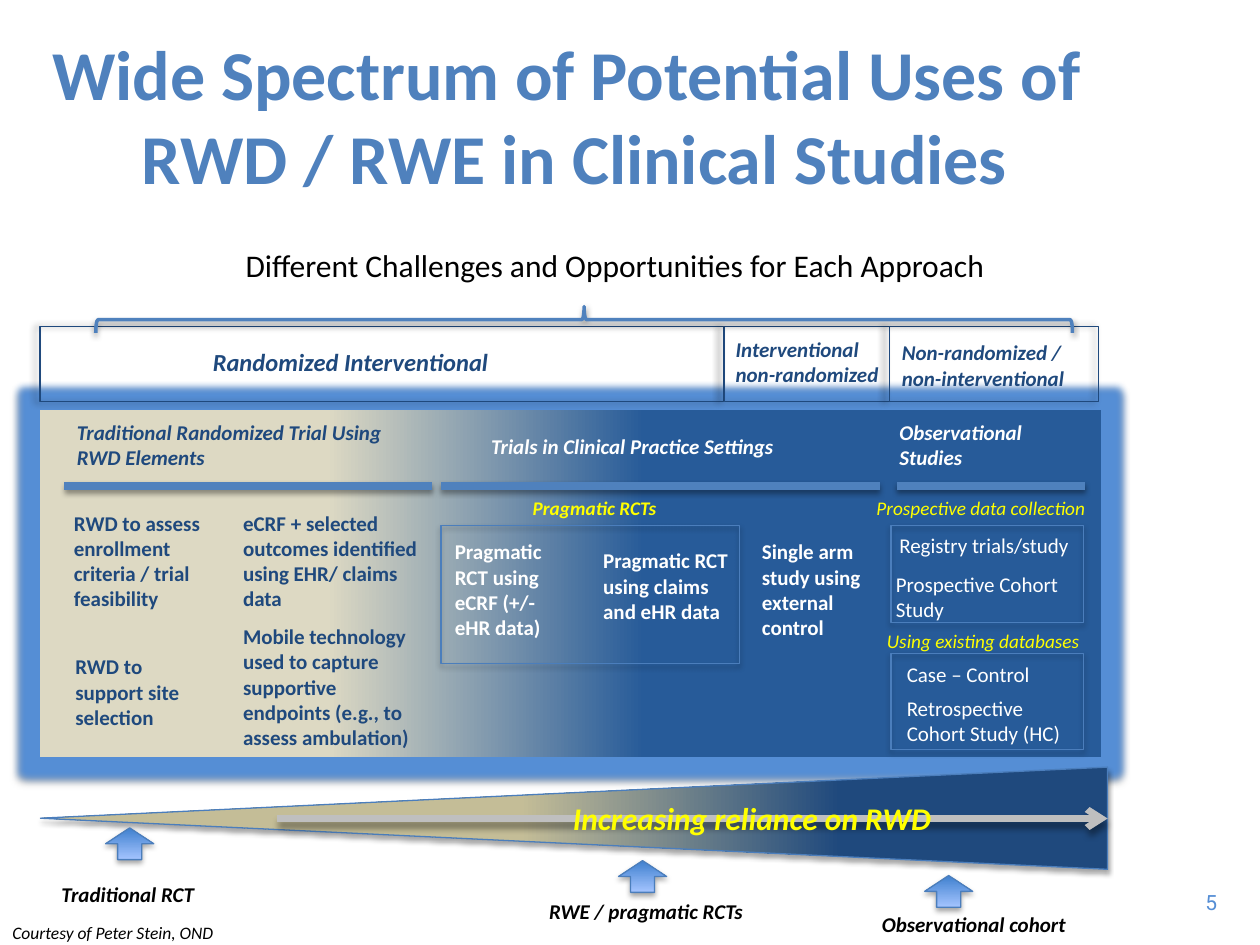
from dataclasses import dataclass
from typing import NamedTuple, Optional

from pptx import Presentation
from pptx.dml.color import RGBColor
from pptx.enum.shapes import MSO_CONNECTOR as Connector, MSO_SHAPE as Preset
from pptx.enum.text import MSO_ANCHOR as Anchor, PP_ALIGN as Align
from pptx.oxml import parse_xml
from pptx.oxml.ns import nsdecls, qn
from pptx.util import Cm, Pt


@dataclass(frozen=True)
class Theme:
    font: str = "Calibri"
    number_font: str = "Roboto"
    accent: str = "4F81BD"
    outline: str = "4B7EBC"
    navy: str = "1F497D"
    white: str = "FFFFFF"
    black: str = "000000"
    yellow: str = "FFFF00"
    gray: str = "BFBFBF"
    number: str = "558ED5"
    glow: str = "558ED5"
    title: float = 40
    large: float = 18
    heading: float = 14
    body: float = 12
    small: float = 11
    credit: float = 10


class Box(NamedTuple):
    """Left, top, width and height in centimetres."""
    left: float
    top: float
    width: float
    height: float


class Shadow(NamedTuple):
    alpha: int
    blur: float
    distance: float
    angle: int


class Stop(NamedTuple):
    position: float
    color: str


@dataclass(frozen=True)
class Label:
    text: str
    box: Box
    color: str
    size: float = 12
    bold: bool = False
    italic: bool = False
    wrap: bool = True
    align: Align = Align.LEFT
    anchor: Anchor = Anchor.TOP
    font: str = "Calibri"
    fill: Optional[str] = None


THEME = Theme()
SOFT = Shadow(35, 3.1, 1.8, 90)
RULE = Shadow(38, 3.1, 1.6, 90)
SIDE = Shadow(40, 4, 3, 180)
BELOW = Shadow(40, 4, 3, 90)

HEADER_TOP, HEADER_HEIGHT = 6.58, 1.52
HEADER_COLUMNS = [(0.81, 13.77), (14.6, 3.33), (17.93, 4.22)]
RULE_Y = 9.8
RULE_SPANS = [(1.3, 8.71), (8.89, 17.73), (18.08, 21.87)]
FRAMES = [Box(17.96, 10.59, 3.89, 1.96), Box(17.96, 13.18, 3.89, 1.93),
          Box(8.89, 10.59, 6.02, 2.79)]
MARKERS = [(2.13, 16.69), (12.47, 17.35), (18.64, 17.65)]


def navy(text: str, *box: float, **style) -> Label:
    return Label(text, Box(*box), THEME.navy, bold=True, **style)


def white(text: str, *box: float, **style) -> Label:
    return Label(text, Box(*box), THEME.white, **style)


def yellow(text: str, *box: float, **style) -> Label:
    return Label(text, Box(*box), THEME.yellow, italic=True, **style)


def milestone(text: str, *box: float) -> Label:
    return Label(text, Box(*box), THEME.black, bold=True, italic=True, fill=THEME.white)


SPECTRUM_LABELS = [
    navy("Randomized Interventional", 4.04, 6.88, 6.12, 0.86,
         size=THEME.heading, italic=True, wrap=False),
    navy("Non-randomized / non-interventional", 17.93, 6.73, 4.06, 1.3, italic=True),
    navy("Interventional non-randomized", 14.58, 6.65, 3.53, 1.27, italic=True),
    navy("Traditional Randomized Trial Using RWD Elements", 1.3, 8.33, 7.32, 1.27, italic=True),
    white("Trials in Clinical Practice Settings", 9.65, 8.61, 6.99, 0.86, bold=True, italic=True),
    white("Observational Studies", 17.88, 8.33, 3.73, 1.45, bold=True, italic=True),
    navy("RWD to assess enrollment criteria / trial feasibility", 1.24, 10.16, 3.28, 2.31),
    navy("RWD to support site selection", 1.27, 13.06, 3.28, 1.8),
    navy("eCRF + selected outcomes identified using EHR/ claims data", 4.65, 10.16, 4.06, 2.31),
    navy("Mobile technology\nused to capture supportive endpoints (e.g., to assess ambulation)",
         4.65, 12.45, 4.24, 2.82),
    yellow("Pragmatic RCTs", 10.49, 9.88, 3.15, 0.74, size=THEME.small, bold=True, wrap=False),
    white("Pragmatic RCT using eCRF (+/- eHR data)", 8.92, 10.74, 2.82, 2.31, bold=True),
    white("Pragmatic RCT using claims and eHR data", 11.91, 10.92, 3.02, 2.31, bold=True),
    white("Single arm study using external control", 15.11, 10.74, 2.59, 2.31, bold=True),
    yellow("Prospective data collection", 17.42, 9.88, 4.75, 0.74, size=THEME.small, wrap=False),
    white("Registry trials/study", 17.88, 10.62, 5.05, 0.76),
    white("Prospective Cohort\nStudy", 17.81, 11.4, 4.52, 1.27),
    yellow("Using existing databases", 17.63, 12.57, 4.6, 0.74, size=THEME.small, wrap=False),
    white("Case – Control", 18.03, 13.21, 4.52, 0.76),
    white("Retrospective Cohort Study (HC)", 18.03, 13.89, 3.94, 1.27),
]
OUTER_LABELS = [
    Label("Wide Spectrum of Potential Uses of \vRWD / RWE in Clinical Studies",
          Box(0.53, 1.04, 22.1, 2.54), THEME.accent, THEME.title, bold=True,
          align=Align.CENTER, anchor=Anchor.MIDDLE),
    Label("Different Challenges and Opportunities for Each Approach",
          Box(4.7, 4.83, 15.6, 1.02), THEME.black, THEME.large, wrap=False),
    yellow("Increasing reliance on RWD", 11.3, 15.98, 9.47, 1.02, size=THEME.large, bold=True),
    milestone("Traditional RCT", 0.99, 17.65, 4.17, 0.76),
    milestone("RWE / pragmatic RCTs", 10.82, 17.98, 5.21, 0.76),
    milestone("Observational cohort", 17.53, 18.26, 4.95, 0.76),
    Label("Courtesy of Peter Stein, OND", Box(0, 18.47, 4.62, 0.69), THEME.black,
          THEME.credit, italic=True, wrap=False),
    Label("5", Box(23.75, 17.81, 1.04, 0.76), THEME.number, wrap=False,
          align=Align.RIGHT, font=THEME.number_font),
]


def rgb(color: str) -> RGBColor:
    return RGBColor.from_string(color)


def set_effects(shape, shadow: Optional[Shadow] = None, glow: float = 0) -> None:
    """Replace inherited effects; call after fill and line are set."""
    effects = ""
    if glow:
        effects += (f'<a:glow rad="{Pt(glow)}"><a:srgbClr val="{THEME.glow}"/></a:glow>')
    if shadow:
        effects += (f'<a:outerShdw blurRad="{Pt(shadow.blur)}" dist="{Pt(shadow.distance)}" '
                    f'dir="{shadow.angle * 60000}" rotWithShape="0"><a:srgbClr val="{THEME.black}">'
                    f'<a:alpha val="{shadow.alpha * 1000}"/></a:srgbClr></a:outerShdw>')
    shape._element.spPr.append(parse_xml(
        f'<a:effectLst {nsdecls("a")}>{effects}</a:effectLst>'))


def draw_shape(slide, preset: Preset, box: Box, line: Optional[str] = None, weight: float = 0.75,
               stops: tuple = (), angle: float = 0, rotation: float = 0,
               shadow: Shadow = SOFT, glow: float = 0) -> None:
    shape = slide.shapes.add_shape(preset, *map(Cm, box))
    shape.rotation = rotation
    if stops:
        shape.fill.gradient()
        shape.fill.gradient_angle = angle
        for target, stop in zip(shape.fill.gradient_stops, stops):
            target.position = stop.position
            target.color.rgb = rgb(stop.color)
    else:
        shape.fill.background()
    if line:
        shape.line.color.rgb = rgb(line)
        shape.line.width = Pt(weight)
    else:
        shape.line.fill.background()
    set_effects(shape, shadow, glow)


def draw_line(slide, start: tuple, end: tuple, color: str, weight: float,
              shadow: Shadow, arrow: bool = False) -> None:
    line = slide.shapes.add_connector(Connector.STRAIGHT, *map(Cm, start + end))
    line.line.color.rgb = rgb(color)
    line.line.width = Pt(weight)
    if arrow:
        line._element.spPr.find(qn("a:ln")).append(
            parse_xml(f'<a:tailEnd {nsdecls("a")} type="arrow"/>'))
    set_effects(line, shadow)


def draw_label(slide, label: Label) -> None:
    textbox = slide.shapes.add_textbox(*map(Cm, label.box))
    if label.fill:
        textbox.fill.solid()
        textbox.fill.fore_color.rgb = rgb(label.fill)
    frame = textbox.text_frame
    frame.word_wrap = label.wrap
    frame.vertical_anchor = label.anchor
    frame.text = label.text
    for paragraph in frame.paragraphs:
        paragraph.alignment = label.align
        for run in paragraph.runs:
            run.font.name, run.font.size = label.font, Pt(label.size)
            run.font.bold, run.font.italic = label.bold, label.italic
            run.font.color.rgb = rgb(label.color)


def main() -> None:
    deck = Presentation()
    deck.slide_width, deck.slide_height = Cm(25.4), Cm(19.05)
    slide = deck.slides.add_slide(deck.slide_layouts[6])

    draw_shape(slide, Preset.RECTANGLE, Box(0.81, 8.26, 21.39, 7.01), angle=180, glow=8,
               stops=(Stop(0.43, "275B99"), Stop(0.73, "DDD9C3")))
    for left, width in HEADER_COLUMNS:
        draw_shape(slide, Preset.RECTANGLE, Box(left, HEADER_TOP, width, HEADER_HEIGHT),
                   THEME.navy, shadow=SIDE)
    for left, right in RULE_SPANS:
        draw_line(slide, (left, RULE_Y), (right, RULE_Y), THEME.accent, 4.5, RULE)
    for frame in FRAMES:
        draw_shape(slide, Preset.RECTANGLE, frame, THEME.outline)
    for label in SPECTRUM_LABELS:
        draw_label(slide, label)

    draw_shape(slide, Preset.FLOWCHART_MERGE, Box(10.54, 5.74, 2.06, 21.51), THEME.outline,
               stops=(Stop(0.25, THEME.navy), Stop(0.55, "C4BD97")), angle=270, rotation=90)
    draw_line(slide, (5.59, 16.5), (22.33, 16.5), THEME.gray, 3.75, BELOW, arrow=True)
    for label in OUTER_LABELS:
        draw_label(slide, label)
    for left, top in MARKERS:
        draw_shape(slide, Preset.UP_ARROW, Box(left, top, 0.97, 0.64), THEME.outline,
                   stops=(Stop(0, "3F80CE"), Stop(1, "A4C4FF")), angle=270)
    draw_shape(slide, Preset.LEFT_BRACE, Box(11.51, -3.4, 0.53, 19.69), THEME.accent, 2,
               rotation=90, shadow=RULE)
    deck.save("out.pptx")


if __name__ == "__main__":
    main()
